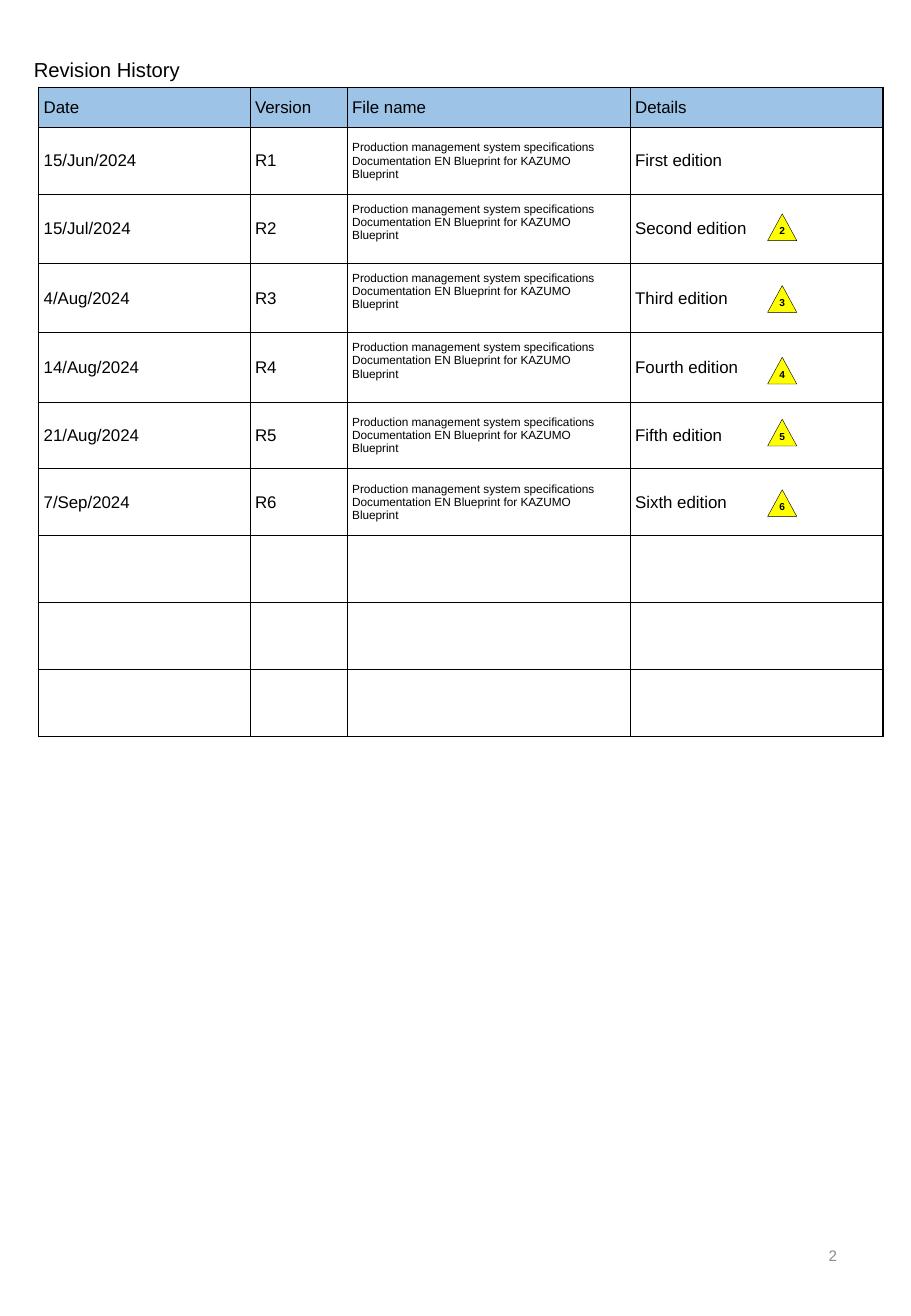
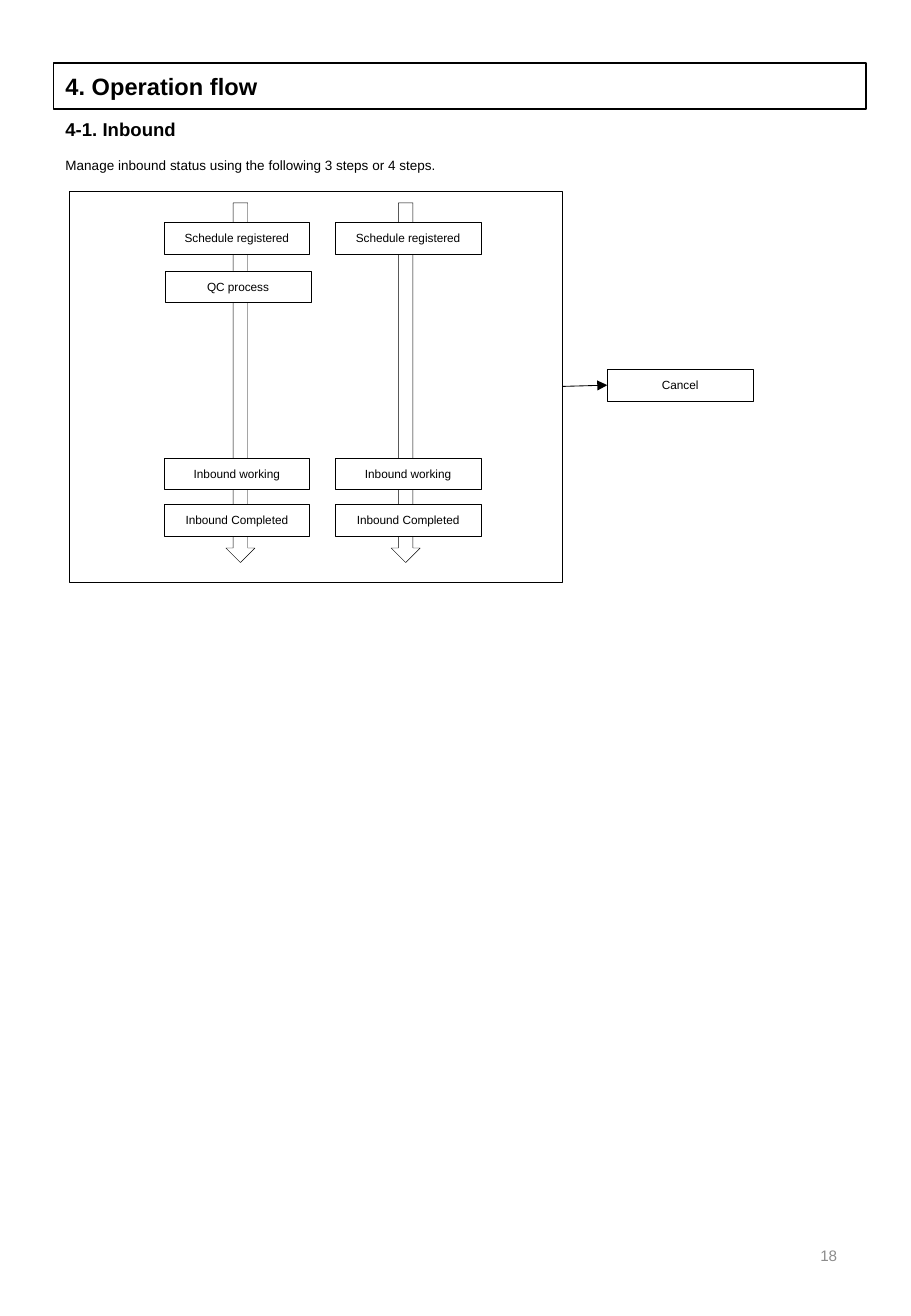
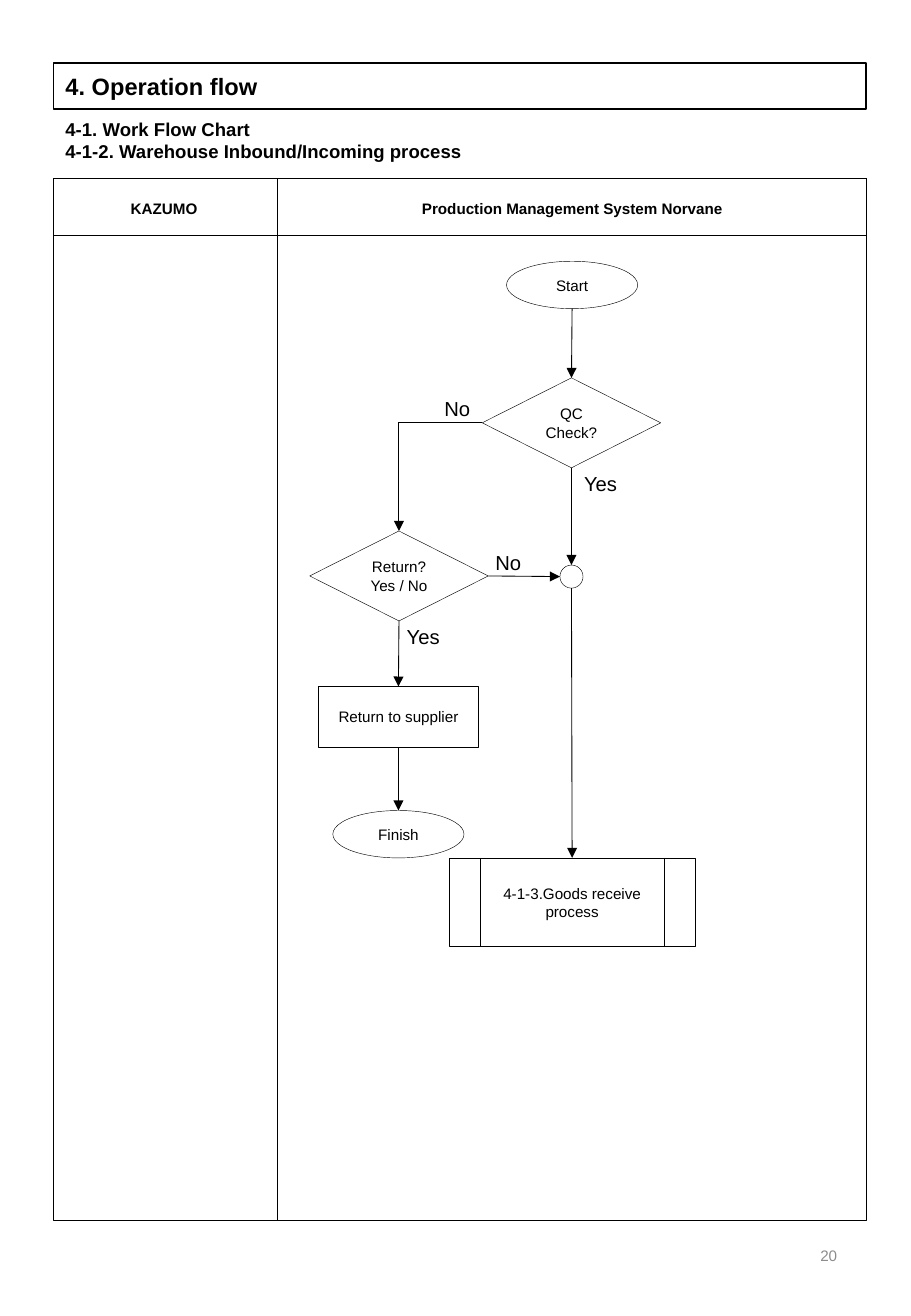
from dataclasses import dataclass
from typing import Optional

from lxml.etree import SubElement
from pptx import Presentation
from pptx.dml.color import RGBColor
from pptx.enum.shapes import MSO_CONNECTOR, MSO_SHAPE
from pptx.enum.text import MSO_ANCHOR, PP_ALIGN
from pptx.oxml.ns import qn
from pptx.shapes.autoshape import Shape
from pptx.shapes.connector import Connector
from pptx.slide import Slide
from pptx.table import _Cell
from pptx.text.text import TextFrame
from pptx.util import Inches, Pt

FONT = "Arial"
BLACK, WHITE, GRAY = "000000", "FFFFFF", "8C8C8C"
BLUE, YELLOW = "9DC3E6", "FFFF00"
LEFT, WIDTH = 0.44, 6.69
TOP_SIDE, LEFT_SIDE, BOTTOM_SIDE, RIGHT_SIDE = range(4)


@dataclass
class Style:
    size: float
    bold: bool = False
    color: str = BLACK
    align: PP_ALIGN = PP_ALIGN.LEFT
    anchor: MSO_ANCHOR = MSO_ANCHOR.MIDDLE


@dataclass
class Box:
    x: float
    y: float
    w: float
    h: float
    text: str = ""
    kind: MSO_SHAPE = MSO_SHAPE.RECTANGLE


@dataclass
class Issue:
    date: str
    name: str
    pad: float = 0.05
    height: float = 0.55
    mark: Optional[float] = None


TITLE = Style(14, True)
SECTION = Style(11, True, anchor=MSO_ANCHOR.TOP)
BODY = Style(8, anchor=MSO_ANCHOR.TOP)
LABEL = Style(12, anchor=MSO_ANCHOR.TOP)
FOOTER = Style(9, color=GRAY, align=PP_ALIGN.RIGHT)
STEP = Style(7, align=PP_ALIGN.CENTER)
NODE = Style(9, align=PP_ALIGN.CENTER)
LANE = Style(9, True, align=PP_ALIGN.CENTER)
MARK = Style(6, True, align=PP_ALIGN.CENTER)


def paint(code: str) -> RGBColor:
    return RGBColor.from_string(code)


def write(frame: TextFrame, text: str, style: Style) -> None:
    for i, line in enumerate(text.split("\n")):
        para = frame.add_paragraph() if i else frame.paragraphs[0]
        para.text = line
        para.alignment = style.align
        font = para.font
        font.name, font.size, font.bold = FONT, Pt(style.size), style.bold
        font.color.rgb = paint(style.color)


def label(slide: Slide, box: Box, style: Style, wrap: bool = True) -> None:
    shape = slide.shapes.add_textbox(
        Inches(box.x), Inches(box.y), Inches(box.w), Inches(box.h))
    frame = shape.text_frame
    frame.word_wrap = wrap
    frame.vertical_anchor = style.anchor
    write(frame, box.text, style)


def draw(slide: Slide, box: Box, style: Style = NODE,
         fill: Optional[str] = WHITE, line: float = 0.25) -> Shape:
    shape = slide.shapes.add_shape(
        box.kind, Inches(box.x), Inches(box.y), Inches(box.w), Inches(box.h))
    shape.shadow.inherit = False
    if fill:
        shape.fill.solid()
        shape.fill.fore_color.rgb = paint(fill)
    else:
        shape.fill.background()
    shape.line.color.rgb = paint(BLACK)
    shape.line.width = Pt(line)
    if box.text:
        frame = shape.text_frame
        frame.word_wrap = True
        frame.vertical_anchor = style.anchor
        write(frame, box.text, style)
    return shape


def stroke(wire: Connector, head: bool) -> None:
    wire.line.color.rgb = paint(BLACK)
    wire.line.width = Pt(0.5)
    if head:
        SubElement(wire.line._get_or_add_ln(), qn("a:tailEnd"), type="triangle")
    SubElement(wire._element.spPr, qn("a:effectLst"))


def point(shape: Shape, side: int) -> tuple[int, int]:
    across = {LEFT_SIDE: 0, RIGHT_SIDE: shape.width}
    down = {TOP_SIDE: 0, BOTTOM_SIDE: shape.height}
    return (shape.left + across.get(side, shape.width // 2),
            shape.top + down.get(side, shape.height // 2))


def joins(shape: Shape, side: int) -> bool:
    return shape.auto_shape_type != MSO_SHAPE.OVAL or side == TOP_SIDE


def link(slide: Slide, start: Shape, out: int, end: Shape, into: int,
         bent: bool = False) -> None:
    kind = MSO_CONNECTOR.ELBOW if bent else MSO_CONNECTOR.STRAIGHT
    wire = slide.shapes.add_connector(
        kind, *point(start, out), *point(end, into))
    if bent:
        wire._element.spPr.find(qn("a:prstGeom")).set("prst", "bentConnector2")
    if joins(start, out):
        wire.begin_connect(start, out)
    if joins(end, into):
        wire.end_connect(end, into)
    stroke(wire, True)


def page(deck: Presentation, number: int) -> Slide:
    slide = deck.slides.add_slide(deck.slide_layouts[6])
    label(slide, Box(5.3, 10.04, 1.69, 0.58, str(number)), FOOTER)
    return slide


def chapter(deck: Presentation, number: int, text: str, height: float) -> Slide:
    slide = page(deck, number)
    draw(slide, Box(LEFT, 0.52, WIDTH, 0.38, "4. Operation flow"),
         TITLE, None, 1)
    label(slide, Box(LEFT, 0.92, WIDTH, height, text), SECTION)
    return slide


def border(cell: _Cell) -> None:
    props = cell._tc.get_or_add_tcPr()
    for i, tag in enumerate(("a:lnL", "a:lnR", "a:lnT", "a:lnB")):
        line = props.makeelement(qn(tag), {"w": str(Pt(0.75))})
        fill = SubElement(line, qn("a:solidFill"))
        SubElement(fill, qn("a:srgbClr"), val=BLACK)
        props.insert(i, line)


def fill_cell(cell: _Cell, text: str, size: float, pad: float,
              fill: Optional[str]) -> None:
    cell.margin_left, cell.margin_right = Inches(0.04), Inches(0.1)
    cell.margin_top, cell.margin_bottom = Inches(0.05), Inches(pad)
    cell.vertical_anchor = MSO_ANCHOR.MIDDLE
    if fill:
        cell.fill.solid()
        cell.fill.fore_color.rgb = paint(fill)
    else:
        cell.fill.background()
    border(cell)
    if text:
        write(cell.text_frame, text, Style(size))


def history(deck: Presentation) -> None:
    slide = page(deck, 2)
    label(slide, Box(0.18, 0.42, 1.56, 0.3, "Revision History"), Style(12))
    issues = [
        Issue("15/Jun/2024", "First"),
        Issue("15/Jul/2024", "Second", 0.16, 0.57, 1.76),
        Issue("4/Aug/2024", "Third", 0.16, 0.57, 2.35),
        Issue("14/Aug/2024", "Fourth", 0.16, 0.57, 2.94),
        Issue("21/Aug/2024", "Fifth", mark=3.45),
        Issue("7/Sep/2024", "Sixth", mark=4.03),
    ]
    file = ("Production management system specifications\n"
            "Documentation EN Blueprint for KAZUMO\nBlueprint")
    spare = 3
    rows = [("Date", "Version", "File name", "Details")]
    rows += [(issue.date, f"R{i}", file, f"{issue.name} edition")
             for i, issue in enumerate(issues, 1)]
    rows += [("",) * 4] * spare
    heights = [0.33] + [issue.height for issue in issues] + [0.55] * spare
    pads = [0.05] + [issue.pad for issue in issues] + [0.05] * spare
    widths = (1.74, 0.8, 2.33, 2.08)
    table = slide.shapes.add_table(
        len(rows), len(widths), Inches(0.32), Inches(0.72),
        Inches(sum(widths)), Inches(sum(heights))).table
    table.first_row = table.horz_banding = False
    for col, width in zip(table.columns, widths):
        col.width = Inches(width)
    for r, row in enumerate(rows):
        table.rows[r].height = Inches(heights[r])
        for c, text in enumerate(row):
            small = r > 0 and c == 2
            fill_cell(table.cell(r, c), text, 7 if small else 10,
                      pads[r] if small else 0.05, None if r else BLUE)
    for i, issue in enumerate(issues, 1):
        if issue.mark:
            box = Box(6.32, issue.mark, 0.24, 0.22, str(i),
                      MSO_SHAPE.ISOSCELES_TRIANGLE)
            frame = draw(slide, box, MARK, YELLOW).text_frame
            frame.margin_top = 0
            frame.word_wrap = False


def inbound(deck: Presentation) -> None:
    slide = chapter(deck, 18, "4-1. Inbound", 0.29)
    label(slide, Box(
        LEFT, 1.24, WIDTH, 0.24,
        "Manage inbound status using the following 3 steps or 4 steps."), BODY)
    area = draw(slide, Box(0.57, 1.57, 4.06, 3.22))
    steps = {"Schedule registered": 1.83, "Inbound working": 3.77,
             "Inbound Completed": 4.15}
    for x, shaft in ((1.35, 1.86), (2.76, 3.22)):
        draw(slide, Box(shaft, 1.67, 0.24, 2.96, kind=MSO_SHAPE.DOWN_ARROW))
        for text, y in steps.items():
            draw(slide, Box(x, y, 1.2, 0.26, text), STEP)
    draw(slide, Box(1.36, 2.23, 1.2, 0.26, "QC process"), STEP)
    cancel = draw(slide, Box(5, 3.04, 1.2, 0.26, "Cancel"), STEP, None)
    link(slide, area, RIGHT_SIDE, cancel, LEFT_SIDE)


def workflow(deck: Presentation) -> None:
    slide = chapter(
        deck, 20, "4-1. Work Flow Chart\n"
        "4-1-2. Warehouse Inbound/Incoming process", 0.47)
    top, split = 1.47, 2.28
    for height in (8.57, 0.47):
        draw(slide, Box(LEFT, top, WIDTH, height), fill=None)
    rule = slide.shapes.add_connector(
        MSO_CONNECTOR.STRAIGHT, Inches(split), Inches(top),
        Inches(split), Inches(10.04))
    stroke(rule, False)
    label(slide, Box(0.43, 1.48, 1.84, 0.47, "KAZUMO"), LANE)
    label(slide, Box(2.29, 1.48, 4.84, 0.47,
                     "Production Management System Norvane"), LANE)

    oval, choice = MSO_SHAPE.OVAL, MSO_SHAPE.FLOWCHART_DECISION
    start = draw(slide, Box(4.17, 2.15, 1.08, 0.39, "Start", oval))
    check = draw(slide, Box(3.97, 3.11, 1.47, 0.74, "QC Check?", choice))
    query = draw(slide, Box(2.55, 4.37, 1.47, 0.74,
                            "Return?\nYes / No", choice))
    merge = draw(slide, Box(4.61, 4.65, 0.19, 0.19, kind=oval))
    back = draw(slide, Box(2.62, 5.65, 1.32, 0.5, "Return to supplier"))
    finish = draw(slide, Box(2.74, 6.67, 1.08, 0.39, "Finish", oval))
    goods = draw(slide, Box(3.7, 7.06, 2.02, 0.73,
                            "4-1-3.Goods receive\nprocess",
                            MSO_SHAPE.FLOWCHART_PREDEFINED_PROCESS))
    for above, below in ((start, check), (check, merge), (merge, goods),
                         (query, back), (back, finish)):
        link(slide, above, BOTTOM_SIDE, below, TOP_SIDE)
    link(slide, query, RIGHT_SIDE, merge, LEFT_SIDE)
    link(slide, check, LEFT_SIDE, query, TOP_SIDE, True)
    for x, y, text in ((4.71, 3.83, "Yes"), (3.25, 5.09, "Yes"),
                       (3.56, 3.21, "No"), (3.98, 4.48, "No")):
        width = 0.48 if text == "Yes" else 0.42
        label(slide, Box(x, y, width, 0.3, text), LABEL, False)


def main() -> None:
    deck = Presentation()
    deck.slide_width, deck.slide_height = Inches(7.5), Inches(10.83)
    history(deck)
    inbound(deck)
    workflow(deck)
    deck.save("out.pptx")


if __name__ == "__main__":
    main()
